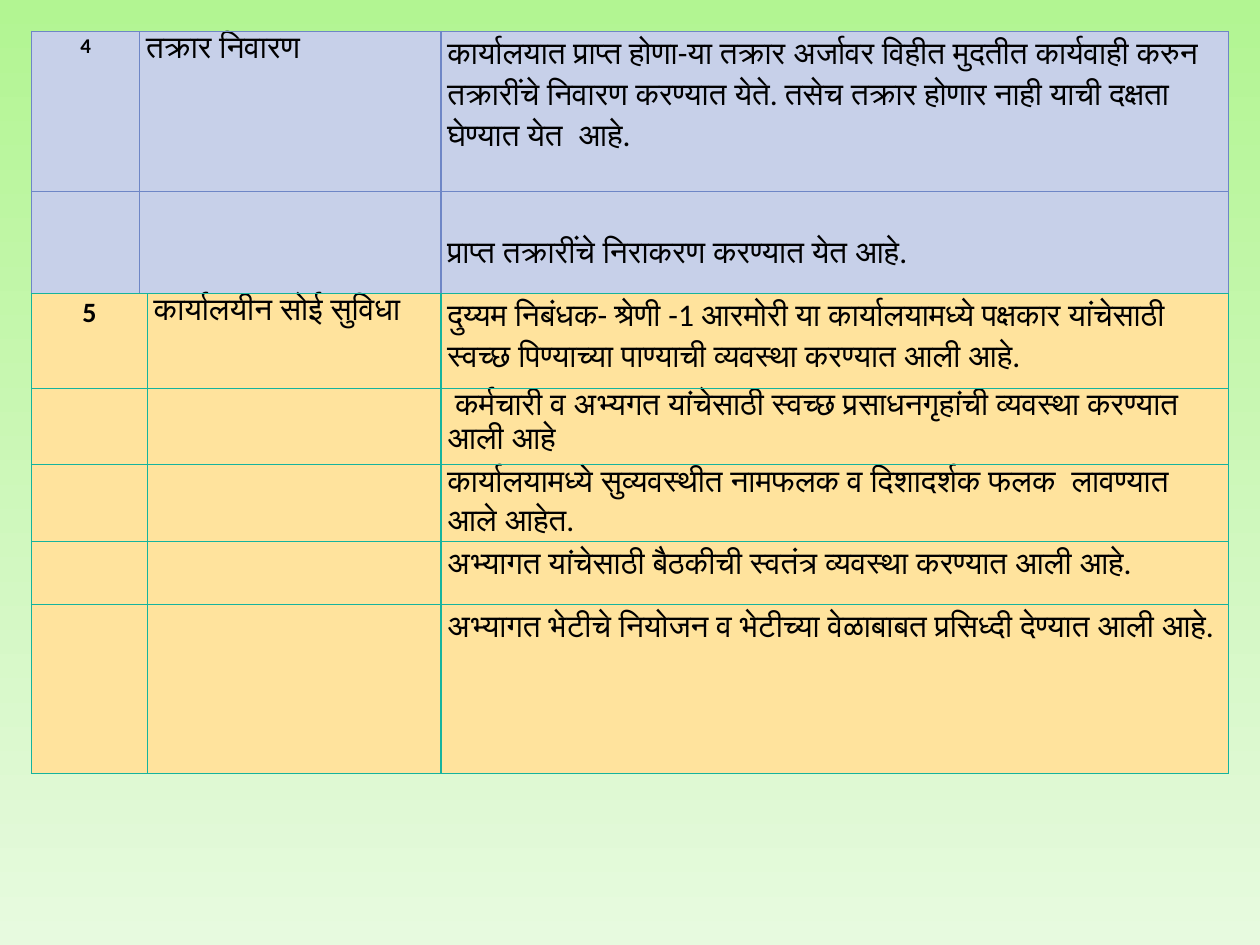
from lxml import etree
from pptx import Presentation
from pptx.dml.color import RGBColor
from pptx.enum.text import PP_ALIGN
from pptx.oxml.ns import qn
from pptx.util import Inches, Pt

CENTER, LEFT = PP_ALIGN.CENTER, PP_ALIGN.LEFT
COLORS = {
    "page_top": "B2F592", "page_bottom": "E7FADF", "text": "000000",
    "blue": "C7D0E9", "blue_line": "6E86C6",
    "yellow": "FFE39D", "teal_line": "16B39E",
}


def write_cell(cell, text, size=18, bold=False, align=LEFT, top=0):
    cell.margin_left = cell.margin_right = Inches(0.05)
    cell.margin_top, cell.margin_bottom = Inches(top), 0
    para = cell.text_frame.paragraphs[0]
    para.alignment = align
    para.line_spacing = 1.07
    if text:
        span = para.add_run()
        span.text = text
        span.font.name = "Calibri"
        span.font.size = Pt(size)
        span.font.bold = bold
        span.font.color.rgb = RGBColor.from_string(COLORS["text"])


def paint_cell(cell, fill, line):
    # Borders come before the fill in the cell properties
    properties = cell._tc.get_or_add_tcPr()
    for side in ("a:lnL", "a:lnR", "a:lnT", "a:lnB"):
        border = etree.SubElement(properties, qn(side), w=str(Pt(0.75)))
        solid = etree.SubElement(border, qn("a:solidFill"))
        etree.SubElement(solid, qn("a:srgbClr"), val=COLORS[line])
    cell.fill.solid()
    cell.fill.fore_color.rgb = RGBColor.from_string(COLORS[fill])


deck = Presentation()
deck.slide_width, deck.slide_height = Inches(10), Inches(7.5)
page = deck.slides.add_slide(deck.slide_layouts[6])

# Background, light green from top to bottom
background = page.background.fill
background.gradient()
background.gradient_angle = 270
for stop, name in zip(background.gradient_stops, ("page_top", "page_bottom")):
    stop.color.rgb = RGBColor.from_string(COLORS[name])

# One section per numbered subject; each row holds its height and statement
sections = [
    {"number": "4", "number_size": 12, "subject": "तक्रार निवारण",
     "top": 0.25, "columns": (0.86, 2.39, 6.25),
     "fill": "blue", "line": "blue_line",
     "rows": [
         (1.27, "कार्यालयात प्राप्त होणा-या तक्रार अर्जावर विहीत मुदतीत कार्यवाही करुन "
                "तक्रारींचे निवारण करण्यात येते. तसेच तक्रार होणार नाही याची दक्षता "
                "घेण्यात येत  आहे.", 0),
         (0.81, "प्राप्त तक्रारींचे निराकरण करण्यात येत आहे.", 0.31)]},
    {"number": "5", "number_size": 16, "subject": "कार्यालयीन सोई सुविधा",
     "top": 2.33, "columns": (0.92, 2.33, 6.25),
     "fill": "yellow", "line": "teal_line",
     "rows": [
         (0.75, "दुय्यम निबंधक- श्रेणी -1 आरमोरी या कार्यालयामध्ये पक्षकार यांचेसाठी "
                "स्वच्छ पिण्याच्या पाण्याची व्यवस्था करण्यात आली आहे.", 0),
         (0.61, " कर्मचारी व अभ्यगत यांचेसाठी स्वच्छ प्रसाधनगृहांची व्यवस्था करण्यात "
                "आली आहे", 0),
         (0.61, "कार्यालयामध्ये सुव्यवस्थीत नामफलक व दिशादर्शक फलक  लावण्यात "
                "आले आहेत.", 0),
         (0.5, "अभ्यागत यांचेसाठी बैठकीची स्वतंत्र व्यवस्था करण्यात आली आहे.", 0),
         (1.34, "अभ्यागत भेटीचे नियोजन व भेटीच्या वेळाबाबत प्रसिध्दी देण्यात आली आहे.", 0)]},
]

# Tables
for section in sections:
    rows, columns = section["rows"], section["columns"]
    height = sum(row[0] for row in rows)
    table = page.shapes.add_table(
        len(rows), len(columns), Inches(0.25), Inches(section["top"]),
        Inches(sum(columns)), Inches(height)).table
    table.first_row = table.horz_banding = False
    for column, width in zip(table.columns, columns):
        column.width = Inches(width)
    for index, (row_height, statement, text_top) in enumerate(rows):
        table.rows[index].height = Inches(row_height)
        first = index == 0
        write_cell(table.cell(index, 0), section["number"] if first else "",
                   size=section["number_size"], bold=True, align=CENTER)
        write_cell(table.cell(index, 1), section["subject"] if first else "")
        write_cell(table.cell(index, 2), statement, top=text_top)
    for cell in table.iter_cells():
        paint_cell(cell, section["fill"], section["line"])

deck.save("out.pptx")
